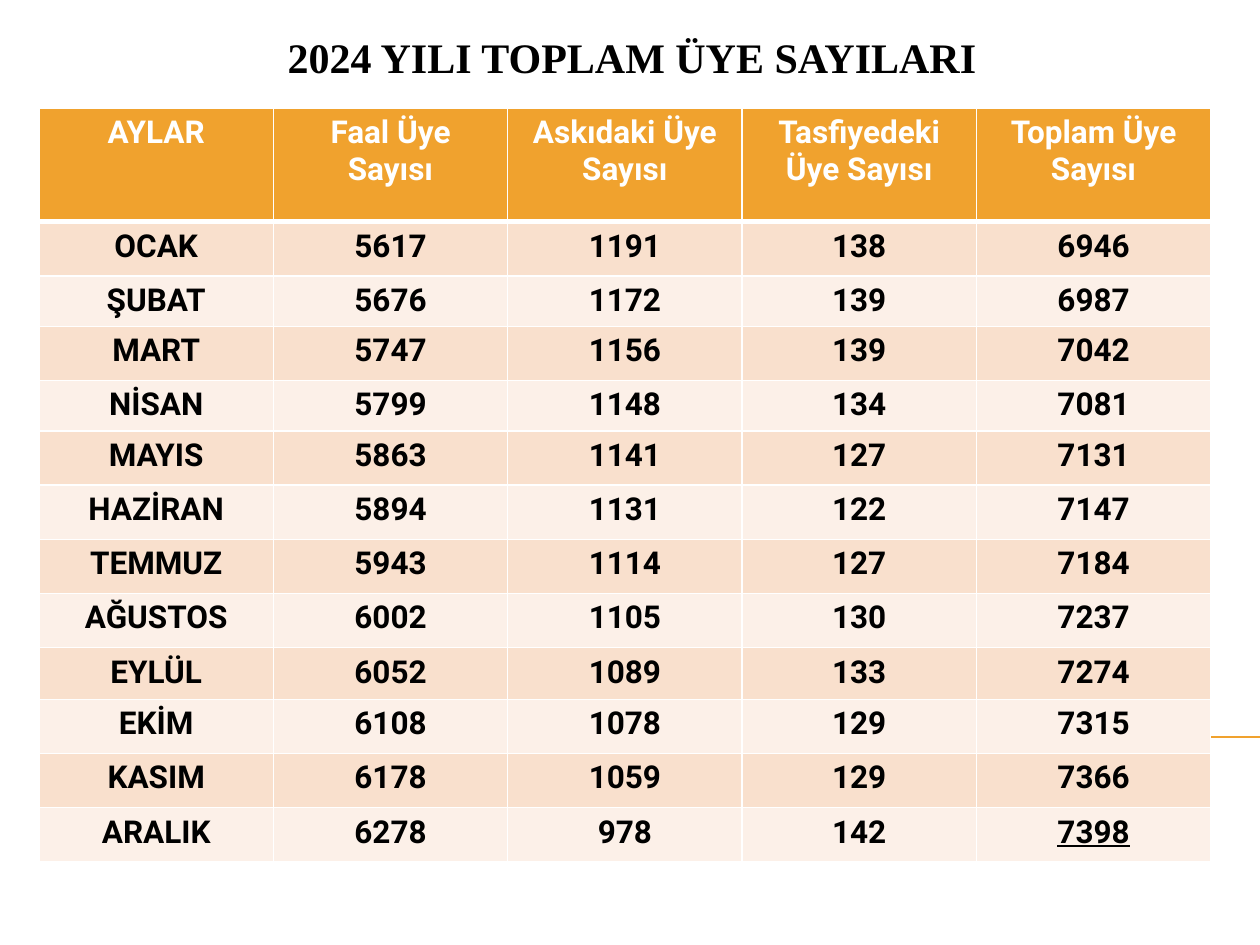
from lxml import etree
from pptx import Presentation
from pptx import util as u
from pptx.dml.color import RGBColor
from pptx.enum import shapes, text
from pptx.oxml.ns import qn

COLORS = {
    "accent": "F0A22E",
    "band_dark": "F9E0CD",
    "band_light": "FCF0E8",
    "white": "FFFFFF",
    "black": "000000",
}
HEADERS = ["AYLAR", "Faal Üye Sayısı", "Askıdaki Üye Sayısı",
           "Tasfiyedeki Üye Sayısı", "Toplam Üye Sayısı"]
# Month, active members, suspended members, members in liquidation
MONTHS = [
    ("OCAK", 5617, 1191, 138),
    ("ŞUBAT", 5676, 1172, 139),
    ("MART", 5747, 1156, 139),
    ("NİSAN", 5799, 1148, 134),
    ("MAYIS", 5863, 1141, 127),
    ("HAZİRAN", 5894, 1131, 122),
    ("TEMMUZ", 5943, 1114, 127),
    ("AĞUSTOS", 6002, 1105, 130),
    ("EYLÜL", 6052, 1089, 133),
    ("EKİM", 6108, 1078, 129),
    ("KASIM", 6178, 1059, 129),
    ("ARALIK", 6278, 978, 142),
]
HEADER_HEIGHT, MONTH_HEIGHT = 0.9, 0.43
SHORT_ROWS = {2: 0.39, 4: 0.35, 9: 0.41}


class SlideBuilder:
    def __init__(self, deck):
        self.slide = deck.slides.add_slide(deck.slide_layouts[6])

    def color(self, name):
        return RGBColor.from_string(COLORS[name])

    def set_text(self, frame, words, font, size, color):
        frame.text = words
        para = frame.paragraphs[0]
        para.alignment = text.PP_ALIGN.CENTER
        span = para.runs[0]
        span.font.name = font
        span.font.size = u.Pt(size)
        span.font.bold = True
        span.font.color.rgb = self.color(color)

    def line(self, x1, y1, x2, y2, color, width):
        line = self.slide.shapes.add_connector(
            shapes.MSO_CONNECTOR.STRAIGHT,
            u.Inches(x1), u.Inches(y1), u.Inches(x2), u.Inches(y2))
        line.line.color.rgb = self.color(color)
        line.line.width = u.Pt(width)
        properties = line._element.find(qn("p:spPr"))
        etree.SubElement(properties, qn("a:effectLst"))

    def title(self, words, left, top, width, height):
        box = self.slide.shapes.add_textbox(
            u.Inches(left), u.Inches(top), u.Inches(width), u.Inches(height))
        frame = box.text_frame
        frame.word_wrap = True
        frame.vertical_anchor = text.MSO_ANCHOR.BOTTOM
        self.set_text(frame, words, "Times New Roman", 24, "black")

    def borders(self, cell, **widths):
        """Draw white cell borders; widths maps L, R, T, B to points."""
        properties = cell._tc.get_or_add_tcPr()
        for side, width in widths.items():
            edge = etree.SubElement(properties, qn(f"a:ln{side}"), w=str(u.Pt(width)))
            fill = etree.SubElement(edge, qn("a:solidFill"))
            etree.SubElement(fill, qn("a:srgbClr"), val=COLORS["white"])

    def table(self, rows, heights, left, top, width):
        table = self.slide.shapes.add_table(
            len(rows), len(rows[0]), u.Inches(left), u.Inches(top),
            u.Inches(width), u.Inches(sum(heights))).table
        for row, height in zip(table.rows, heights):
            row.height = u.Inches(height)
        for r, values in enumerate(rows):
            if r == 0:
                fill, ink = "accent", "white"
            else:
                fill, ink = "band_dark" if r % 2 else "band_light", "black"
            for c, value in enumerate(values):
                cell = table.cell(r, c)
                self.borders(cell, L=1, R=1, T=3 if r == 1 else 1, B=3 if r == 0 else 1)
                cell.fill.solid()
                cell.fill.fore_color.rgb = self.color(fill)
                self.set_text(cell.text_frame, str(value), "Roboto", 18, ink)
        return table


def main():
    deck = Presentation()
    deck.slide_width, deck.slide_height = u.Inches(10), u.Inches(7.5)
    builder = SlideBuilder(deck)

    builder.line(0.56, 5.85, 10, 5.85, "accent", 0.75)
    builder.title("2024 YILI TOPLAM ÜYE SAYILARI", 0.39, 0.23, 9.25, 0.47)

    rows = [HEADERS] + [(month, *counts, sum(counts)) for month, *counts in MONTHS]
    heights = [HEADER_HEIGHT] + [SHORT_ROWS.get(number, MONTH_HEIGHT)
                                 for number in range(1, len(rows))]
    # The eighth month keeps the full height; only the listed rows are shorter.
    table = builder.table(rows, heights, 0.31, 0.86, 9.3)
    year_end = table.cell(len(rows) - 1, len(HEADERS) - 1)
    year_end.text_frame.paragraphs[0].runs[0].font.underline = True

    deck.save("out.pptx")


if __name__ == "__main__":
    main()
